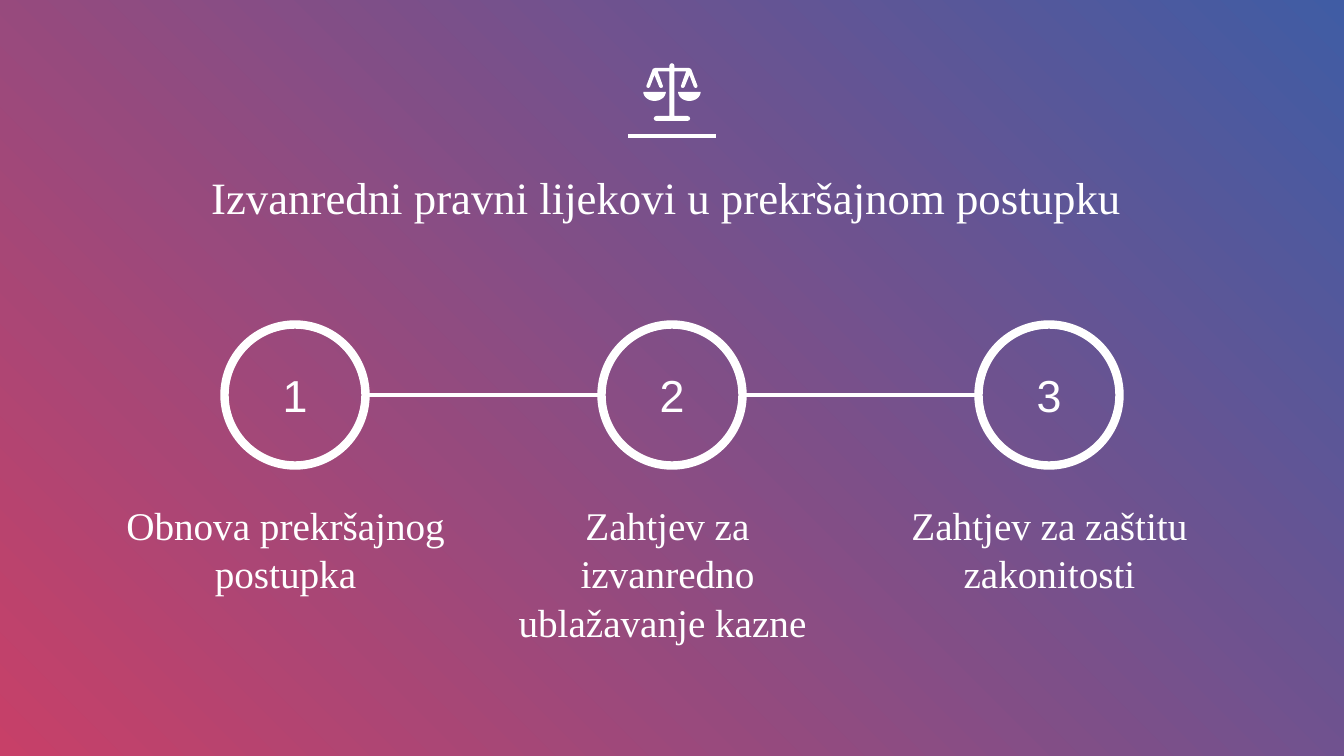
"""Build a slide that shows three numbered legal remedies in a row."""
import math

from lxml import etree
from pptx import Presentation
from pptx import util as u
from pptx.dml.color import RGBColor
from pptx.enum import shapes, text
from pptx.oxml.ns import qn

TITLE = "Izvanredni pravni lijekovi u prekršajnom postupku"
STEPS = [
    "Obnova prekršajnog postupka",
    "Zahtjev za izvanredno ublažavanje kazne ",
    "Zahtjev za zaštitu zakonitosti",
]

WHITE = RGBColor(0xFF, 0xFF, 0xFF)
ROSE = RGBColor(0xC7, 0x40, 0x68)
BLUE = RGBColor(0x40, 0x5C, 0xA4)
SERIF, SANS = "Times New Roman", "Arial"

PX = 914400 / 100.8
WIDTH, HEIGHT = 1344, 756
MIDDLE = WIDTH // 2
CIRCLE = {"size": 141, "pitch": 377, "center_y": 395}
LABEL = {"left": 109, "top": 486, "width": 353, "height": 117, "pitch": 382}

ICON_SCALE = 10
SCALE_HALF = [
    (0, 632), (18, 640), (25, 657), (25, 680), (170, 680), (192, 690),
    (256, 860), (250, 876), (234, 880), (220, 870), (175, 750), (126, 870),
    (112, 880), (95, 876), (90, 860), (142, 715), (25, 715), (25, 1160),
    (155, 1160), (174, 1168), (182, 1185), (174, 1203), (155, 1210),
]
PAN = {"offset": 174, "top": 918, "radius": 113, "depth": 92}


def px(value):
    return u.Emu(round(value * PX))


def apply(target, values):
    for name, value in values.items():
        setattr(target, name, value)


def add_line(page, kind, left, right, y):
    line = page.shapes.add_connector(kind, px(left), px(y), px(right), px(y))
    line.line.color.rgb = WHITE
    line.line.width = u.Pt(3)
    etree.SubElement(line._element.spPr, qn("a:effectLst"))


def add_outline(page, points):
    builder = page.shapes.build_freeform(*points[0], scale=PX / ICON_SCALE)
    builder.add_line_segments(points[1:], close=True)
    outline = builder.convert_to_shape()
    outline.shadow.inherit = False
    outline.fill.solid()
    outline.fill.fore_color.rgb = WHITE
    outline.line.fill.background()


def write(shape, words, font, size, anchor, inset, spacing=1.0):
    box = shape.text_frame
    sides = ("margin_left", "margin_top", "margin_right", "margin_bottom")
    apply(box, {"word_wrap": True, "vertical_anchor": anchor,
                **dict.fromkeys(sides, px(inset))})
    para = box.paragraphs[0]
    apply(para, {"alignment": text.PP_ALIGN.CENTER, "line_spacing": spacing})
    span = para.add_run()
    span.text = words
    apply(span.font, {"name": font, "size": u.Pt(size)})
    span.font.color.rgb = WHITE


def add_background(page):
    panel = page.shapes.add_shape(
        shapes.MSO_SHAPE.RECTANGLE, 0, 0, px(WIDTH), px(HEIGHT))
    panel.shadow.inherit = False
    panel.line.fill.background()
    panel.fill.gradient()
    panel.fill.gradient_angle = 45
    for stop, color, position in zip(panel.fill.gradient_stops, (ROSE, BLUE), (0, 1)):
        stop.color.rgb = color
        stop.position = position


def add_scales(page):
    center = MIDDLE * ICON_SCALE
    right = [(center + x, y) for x, y in SCALE_HALF]
    left = [(center - x, y) for x, y in reversed(SCALE_HALF)]
    add_outline(page, right + left)
    for side in (-1, 1):
        pan_center = center + side * PAN["offset"]
        angles = [math.pi * i / 16 for i in range(17)]
        add_outline(page, [(round(pan_center + PAN["radius"] * math.cos(a)),
                            round(PAN["top"] + PAN["depth"] * math.sin(a)))
                           for a in angles])


def add_step(page, index, words):
    size, pitch, center_y = CIRCLE["size"], CIRCLE["pitch"], CIRCLE["center_y"]
    left = MIDDLE + (index - 1) * pitch - size / 2
    circle = page.shapes.add_shape(
        shapes.MSO_SHAPE.OVAL, px(left), px(center_y - size / 2), px(size), px(size))
    circle.shadow.inherit = False
    circle.fill.background()
    circle.line.color.rgb = WHITE
    circle.line.width = u.Pt(6)
    write(circle, str(index + 1), SANS, 32, text.MSO_ANCHOR.MIDDLE, 13)
    if index:
        add_line(page, shapes.MSO_CONNECTOR.ELBOW, left - pitch + size, left, center_y)
    label = page.shapes.add_textbox(
        px(LABEL["left"] + index * LABEL["pitch"]), px(LABEL["top"]),
        px(LABEL["width"]), px(LABEL["height"]))
    write(label, words, SERIF, 28, text.MSO_ANCHOR.TOP, 13, 1.04)


def main():
    deck = Presentation()
    apply(deck, {"slide_width": px(WIDTH), "slide_height": px(HEIGHT)})
    page = deck.slides.add_slide(deck.slide_layouts[6])
    add_background(page)
    add_line(page, shapes.MSO_CONNECTOR.STRAIGHT, MIDDLE - 44, MIDDLE + 44, 136)
    add_scales(page)
    for index, words in enumerate(STEPS):
        add_step(page, index, words)
    title = page.shapes.add_textbox(px(191), px(117), px(951), px(117))
    write(title, TITLE, SERIF, 32, text.MSO_ANCHOR.BOTTOM, 10)
    deck.save("out.pptx")


if __name__ == "__main__":
    main()
